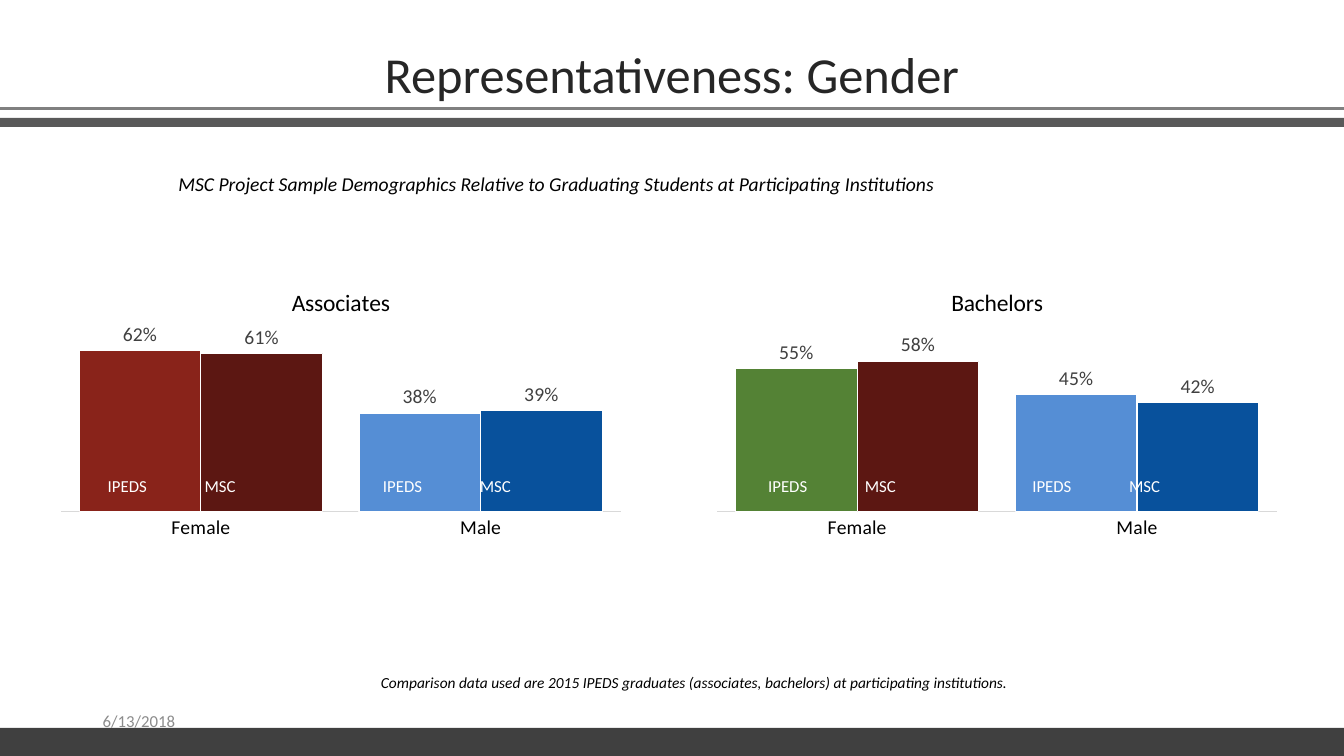
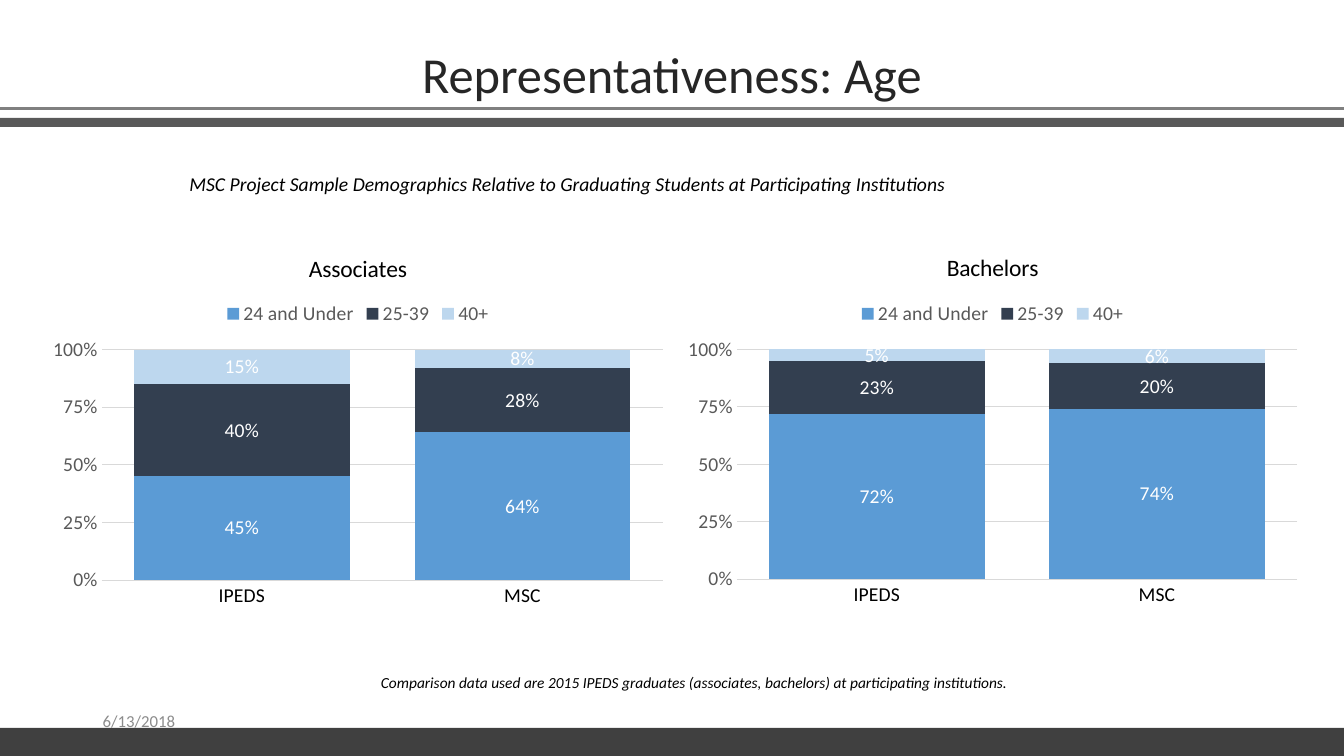
import pptx
import pptx.chart.data
import pptx.dml.color
import pptx.enum.chart
import pptx.enum.shapes
import pptx.enum.text
import pptx.oxml
import pptx.oxml.ns
import pptx.util

RGB = pptx.dml.color.RGBColor
CHART = pptx.enum.chart
ALIGN = pptx.enum.text.PP_ALIGN
ANCHOR = pptx.enum.text.MSO_ANCHOR

PX = 9144  # 100 px to the inch
WIDTH, HEIGHT = 1333, 750
FONT = "Calibri"

BLACK = RGB(0x00, 0x00, 0x00)
WHITE = RGB(0xFF, 0xFF, 0xFF)
TITLE_INK = RGB(0x26, 0x26, 0x26)
LABEL_INK = RGB(0x40, 0x40, 0x40)
AXIS_INK = RGB(0x59, 0x59, 0x59)
DATE_INK = RGB(0x8C, 0x8C, 0x8C)
RULE = RGB(0x80, 0x80, 0x80)
GRID = RGB(0xD9, 0xD9, 0xD9)
RED = RGB(0x89, 0x23, 0x1A)
GREEN = RGB(0x54, 0x82, 0x35)
MAROON = RGB(0x5C, 0x17, 0x12)
LIGHT_BLUE = RGB(0x55, 0x8E, 0xD5)
DEEP_BLUE = RGB(0x08, 0x51, 0x9C)
AGE_COLORS = (RGB(0x5B, 0x9B, 0xD5), RGB(0x33, 0x3F, 0x50), RGB(0xBD, 0xD7, 0xEE))

SUBTITLE = ("MSC Project Sample Demographics Relative to Graduating Students "
            "at Participating Institutions")
SOURCE_NOTE = ("Comparison data used are 2015 IPEDS graduates (associates, bachelors) "
               "at participating institutions.")


def emu(box):
    return [pptx.util.Emu(v * PX) for v in box]


def set_font(font, size, color, italic=False):
    font.name = FONT
    font.size = pptx.util.Pt(size)
    font.color.rgb = color
    font.bold = False
    font.italic = italic


def add_text(s, box, text, size, color, italic=False, align=ALIGN.LEFT, anchor=ANCHOR.TOP):
    tf = s.shapes.add_textbox(*emu(box)).text_frame
    tf.word_wrap = True
    tf.vertical_anchor = anchor
    p = tf.paragraphs[0]
    p.alignment = align
    r = p.add_run()
    r.text = text
    set_font(r.font, size, color, italic)
    return p


def add_band(s, box, color):
    sp = s.shapes.add_shape(pptx.enum.shapes.MSO_SHAPE.RECTANGLE, *emu(box))
    sp.shadow.inherit = False
    sp.fill.solid()
    sp.fill.fore_color.rgb = color
    sp.line.fill.background()


def add_rule(s, y):
    line = s.shapes.add_connector(pptx.enum.shapes.MSO_CONNECTOR.STRAIGHT,
                                  *emu((0, y, WIDTH, y)))
    line.line.color.rgb = RULE
    line.line.width = pptx.util.Pt(2.25)
    pptx.oxml.ns.qn("a:effectLst")
    effects = pptx.oxml.parse_xml(
        "<a:effectLst %s/>" % pptx.oxml.ns.nsdecls("a"))
    line._element.spPr.append(effects)


def add_frame(prs, title, subtitle_x):
    """Blank slide with the title, bands, subtitle, date and source note."""
    s = prs.slides.add_slide(prs.slide_layouts[6])
    add_text(s, (0, 38, WIDTH, 71), title, 36, TITLE_INK, align=ALIGN.CENTER)
    add_rule(s, 108)
    add_band(s, (0, 117, WIDTH, 9), AXIS_INK)
    add_band(s, (0, 722, WIDTH, HEIGHT - 722), LABEL_INK)
    add_text(s, (subtitle_x, 166, 1067, 34), SUBTITLE, 14, BLACK, italic=True)
    add_text(s, (92, 695, 300, 40), "6/13/2018", 12, DATE_INK, anchor=ANCHOR.MIDDLE)
    add_text(s, (178, 663, 1022, 29), SOURCE_NOTE, 11, BLACK, italic=True,
             align=ALIGN.CENTER)
    return s


def add_column_chart(s, box, kind, title, cats, series, label_color, label_position):
    """Column chart with the title, category axis and data labels all charts share."""
    data = pptx.chart.data.CategoryChartData(number_format="0%")
    data.categories = cats
    for name, values in series:
        data.add_series(name, values)
    chart = s.shapes.add_chart(kind, *emu(box), data).chart
    set_font(chart.font, 14, BLACK)

    chart.has_title = True
    r = chart.chart_title.text_frame.paragraphs[0].add_run()
    r.text = title
    set_font(r.font, 16.8, BLACK)
    chart.chart_title.include_in_layout = False

    axis = chart.category_axis
    axis.major_tick_mark = CHART.XL_TICK_MARK.NONE
    axis.format.line.color.rgb = GRID
    axis.format.line.width = pptx.util.Pt(0.75)
    set_font(axis.tick_labels.font, 14, BLACK)

    plot = chart.plots[0]
    plot.gap_width = 30
    plot.vary_by_categories = False
    for ser in plot.series:
        labels = ser.data_labels
        labels.show_value = True
        labels.number_format = "0%"
        labels.number_format_is_linked = False
        labels.position = label_position
        set_font(labels.font, 14, label_color)
    return chart


def add_gender_chart(s, box, title, ipeds, msc, ipeds_female_color):
    """Paired columns, one colour for each column, no value axis."""
    chart = add_column_chart(
        s, box, CHART.XL_CHART_TYPE.COLUMN_CLUSTERED, title, ("Female", "Male"),
        (("Series 1", ipeds), ("Series 2", msc)),
        LABEL_INK, CHART.XL_LABEL_POSITION.OUTSIDE_END)
    chart.has_legend = False
    chart.plots[0].overlap = 0
    axis = chart.value_axis
    axis.visible = False
    axis.has_major_gridlines = False
    axis.minimum_scale, axis.maximum_scale = 0, 0.7
    colors = ((ipeds_female_color, LIGHT_BLUE), (MAROON, DEEP_BLUE))
    for ser, pair in zip(chart.plots[0].series, colors):
        for i, color in enumerate(pair):
            fmt = ser.points[i].format
            fmt.fill.solid()
            fmt.fill.fore_color.rgb = color
            fmt.line.color.rgb = WHITE
            fmt.line.width = pptx.util.Pt(0.75)


def add_pair_label(s, x, y):
    """White column names, the second one set at a tab stop."""
    p = add_text(s, (x, y, 225, 30), "IPEDS\tMSC", 12, WHITE)
    p._p.get_or_add_pPr().append(pptx.oxml.parse_xml(
        '<a:tabLst %s><a:tab pos="%d" algn="l"/></a:tabLst>'
        % (pptx.oxml.ns.nsdecls("a"), 96 * PX)))


def add_age_chart(s, box, title, series):
    """Stacked columns with a legend and a percent axis."""
    chart = add_column_chart(
        s, box, CHART.XL_CHART_TYPE.COLUMN_STACKED, title, ("IPEDS", "MSC"),
        series, WHITE, CHART.XL_LABEL_POSITION.CENTER)
    chart.has_legend = True
    chart.legend.position = CHART.XL_LEGEND_POSITION.TOP
    chart.legend.include_in_layout = False
    set_font(chart.legend.font, 14, AXIS_INK)

    axis = chart.value_axis
    axis.minimum_scale, axis.maximum_scale, axis.major_unit = 0, 1, 0.25
    axis.major_tick_mark = CHART.XL_TICK_MARK.NONE
    axis.format.line.fill.background()
    axis.major_gridlines.format.line.color.rgb = GRID
    axis.major_gridlines.format.line.width = pptx.util.Pt(0.75)
    axis.tick_labels.number_format = "0%"
    axis.tick_labels.number_format_is_linked = False
    set_font(axis.tick_labels.font, 14, AXIS_INK)

    chart.plots[0].overlap = 100
    for ser, color in zip(chart.plots[0].series, AGE_COLORS):
        ser.format.fill.solid()
        ser.format.fill.fore_color.rgb = color


def gender_slide(prs):
    s = add_frame(prs, "Representativeness: Gender", 167)
    charts = (
        (49, "Associates", (0.62, 0.38), (0.61, 0.39), RED, (48, 321)),
        (700, "Bachelors", (0.55, 0.45), (0.58, 0.42), GREEN, (52, 314)),
    )
    for x, title, ipeds, msc, color, label_offsets in charts:
        add_gender_chart(s, (x, 269, 578, 272), title, ipeds, msc, color)
        for dx in label_offsets:
            add_pair_label(s, x + dx, 467)


def age_slide(prs):
    s = add_frame(prs, "Representativeness: Age", 178)
    groups = ("24 and Under", "25-39", "40+")
    charts = (
        ((40, 233, 630, 378), "Associates", ((0.45, 0.64), (0.4, 0.28), (0.15, 0.08))),
        ((670, 233, 629, 377), "Bachelors", ((0.72, 0.74), (0.23, 0.2), (0.05, 0.06))),
    )
    for box, title, values in charts:
        add_age_chart(s, box, title, tuple(zip(groups, values)))


def main():
    prs = pptx.Presentation()
    prs.slide_width, prs.slide_height = emu((WIDTH, HEIGHT))
    gender_slide(prs)
    age_slide(prs)
    prs.save("out.pptx")


if __name__ == "__main__":
    main()
